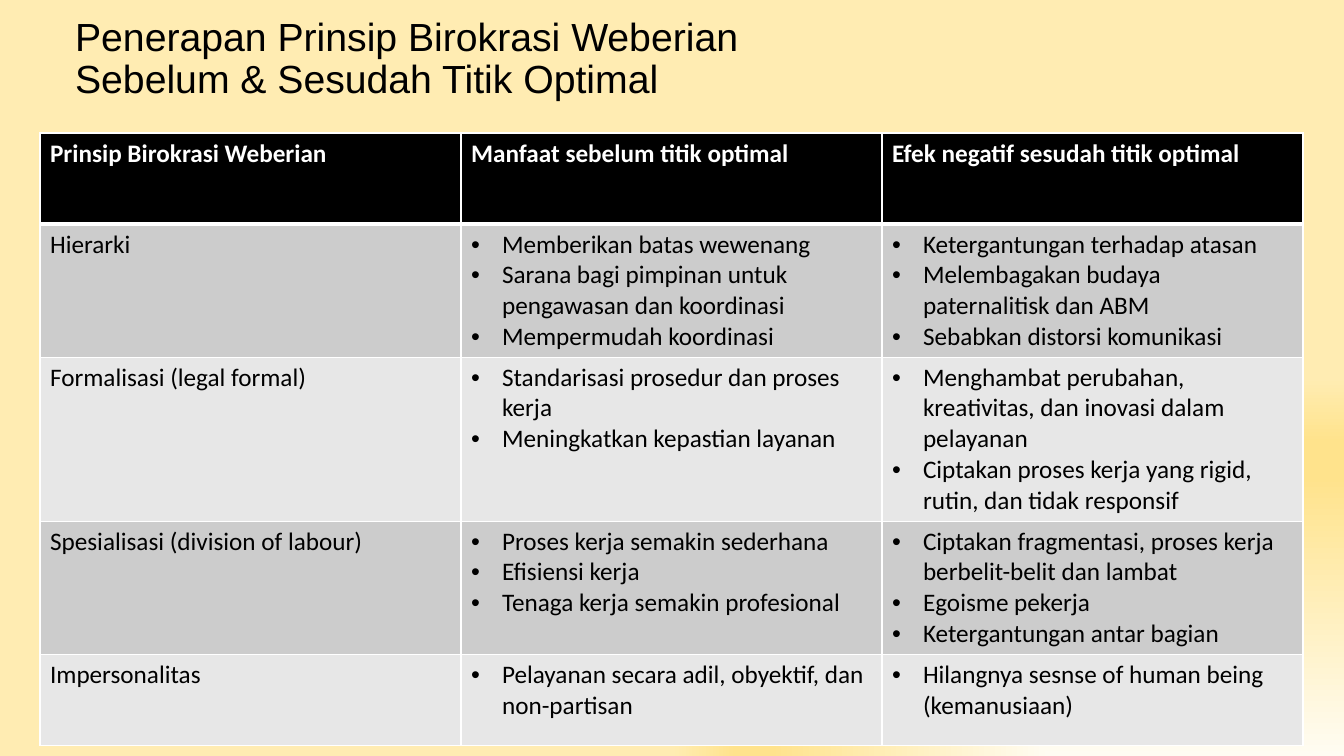
from dataclasses import dataclass

from lxml import etree
from pptx import Presentation
from pptx.dml.color import RGBColor
from pptx.enum.text import MSO_ANCHOR, MSO_AUTO_SIZE, PP_ALIGN
from pptx.oxml.ns import qn
from pptx.util import Emu, Pt

LEFT = PP_ALIGN.LEFT
MIDDLE = MSO_ANCHOR.MIDDLE
NO_AUTOFIT = MSO_AUTO_SIZE.NONE
TITLE_ONLY = 5
SLIDE_WIDTH, SLIDE_HEIGHT = 1344, 756


@dataclass(frozen=True)
class Theme:
    heading_font: str = "Arial"
    table_font: str = "Calibri"
    heading_size: int = 28
    table_size: int = 18
    ink: str = "000000"
    header_ink: str = "FFFFFF"
    header_fill: str = "000000"
    bands: tuple = ("CCCCCC", "E7E7E7")
    rule: str = "FFFFFF"
    rule_width: int = 1
    header_rule_width: int = 3
    backdrop: tuple = ((0, "FFFCF2"), (74, "FFE38C"), (83, "FFE38C"), (100, "FFECB2"))


def px(length):
    return Emu(round(length * 12192000 / SLIDE_WIDTH))


def child(parent, tag, **attributes):
    return etree.SubElement(parent, qn(tag), {key: str(value) for key, value in attributes.items()})


class SlideBuilder:
    def __init__(self, slide, theme):
        self.slide = slide
        self.theme = theme

    def background(self):
        self.slide.background.fill.gradient()
        gradient = self.slide.element.find(".//" + qn("a:gradFill"))
        for part in list(gradient):
            gradient.remove(part)
        stops = child(gradient, "a:gsLst")
        for position, color in self.theme.backdrop:
            child(child(stops, "a:gs", pos=position * 1000), "a:srgbClr", val=color)
        focus = child(gradient, "a:path", path="rect")
        child(focus, "a:fillToRect", l=100000, t=100000)

    def style(self, paragraph, font, size, color, bold=False):
        paragraph.alignment = LEFT
        paragraph.font.name = font
        paragraph.font.size = Pt(size)
        paragraph.font.bold = bold
        paragraph.font.color.rgb = RGBColor.from_string(color)

    def title(self, text, left, top, width, height):
        heading = self.slide.shapes.title
        heading.left, heading.top = px(left), px(top)
        heading.width, heading.height = px(width), px(height)
        frame = heading.text_frame
        frame.text = text
        frame.auto_size = NO_AUTOFIT
        frame.vertical_anchor = MIDDLE
        paragraph = frame.paragraphs[0]
        paragraph.line_spacing = 0.9
        self.style(paragraph, self.theme.heading_font, self.theme.heading_size, self.theme.ink)

    def bullet(self, paragraph, indent):
        properties = paragraph._p.get_or_add_pPr()
        properties.set("marL", str(px(indent)))
        properties.set("indent", str(-px(indent)))
        marker_font = etree.Element(qn("a:buFont"), {"typeface": "Arial"})
        marker = etree.Element(qn("a:buChar"), {"char": "•"})
        properties.insert(0, marker_font)
        properties.insert(1, marker)

    def borders(self, cell, row):
        thin, thick = self.theme.rule_width, self.theme.header_rule_width
        widths = {"L": thin, "R": thin, "T": thick if row == 1 else thin, "B": thick if row == 0 else thin}
        properties = cell._tc.get_or_add_tcPr()
        for side, width in widths.items():
            line = child(properties, f"a:ln{side}", w=Pt(width))
            child(child(line, "a:solidFill"), "a:srgbClr", val=self.theme.rule)

    def cell(self, cell, row, content):
        theme = self.theme
        is_header = row == 0
        self.borders(cell, row)
        cell.fill.solid()
        fill = theme.header_fill if is_header else theme.bands[(row - 1) % 2]
        cell.fill.fore_color.rgb = RGBColor.from_string(fill)
        is_list = isinstance(content, list)
        cell.text = "\n".join(content) if is_list else content
        color = theme.header_ink if is_header else theme.ink
        for paragraph in cell.text_frame.paragraphs:
            self.style(paragraph, theme.table_font, theme.table_size, color, is_header)
            if is_list:
                self.bullet(paragraph, indent=31)

    def table(self, rows, left, top, column_width, row_heights):
        columns = len(rows[0])
        table = self.slide.shapes.add_table(
            len(rows), columns, px(left), px(top), px(column_width * columns), px(sum(row_heights))
        ).table
        table.horz_banding = False
        for column in table.columns:
            column.width = px(column_width)
        for index, (contents, height) in enumerate(zip(rows, row_heights)):
            table.rows[index].height = px(height)
            for position, content in enumerate(contents):
                self.cell(table.cell(index, position), index, content)


PRINCIPLES = [
    ("Prinsip Birokrasi Weberian", "Manfaat sebelum titik optimal", "Efek negatif sesudah titik optimal"),
    (
        "Hierarki",
        [
            "Memberikan batas wewenang",
            "Sarana bagi pimpinan untuk pengawasan dan koordinasi",
            "Mempermudah koordinasi",
        ],
        [
            "Ketergantungan terhadap atasan",
            "Melembagakan budaya paternalitisk dan ABM",
            "Sebabkan distorsi komunikasi",
        ],
    ),
    (
        "Formalisasi (legal formal)",
        ["Standarisasi prosedur dan proses kerja", "Meningkatkan kepastian layanan"],
        [
            "Menghambat perubahan, kreativitas, dan inovasi dalam pelayanan",
            "Ciptakan proses kerja yang rigid, rutin, dan tidak responsif",
        ],
    ),
    (
        "Spesialisasi (division of labour)",
        ["Proses kerja semakin sederhana", "Efisiensi kerja", "Tenaga kerja semakin profesional"],
        [
            "Ciptakan fragmentasi, proses kerja berbelit-belit dan lambat",
            "Egoisme pekerja",
            "Ketergantungan antar bagian",
        ],
    ),
    (
        "Impersonalitas",
        ["Pelayanan secara adil, obyektif, dan non-partisan"],
        ["Hilangnya sesnse of human being (kemanusiaan)"],
    ),
]


def main():
    presentation = Presentation()
    presentation.slide_width, presentation.slide_height = px(SLIDE_WIDTH), px(SLIDE_HEIGHT)
    slide = presentation.slides.add_slide(presentation.slide_layouts[TITLE_ONLY])
    builder = SlideBuilder(slide, Theme())
    builder.background()
    builder.title("Penerapan Prinsip Birokrasi Weberian \vSebelum & Sesudah Titik Optimal", 65, -13, 1215, 146)
    builder.table(PRINCIPLES, 40, 133, 421, (91, 133, 164, 133, 91))
    presentation.save("out.pptx")


if __name__ == "__main__":
    main()
